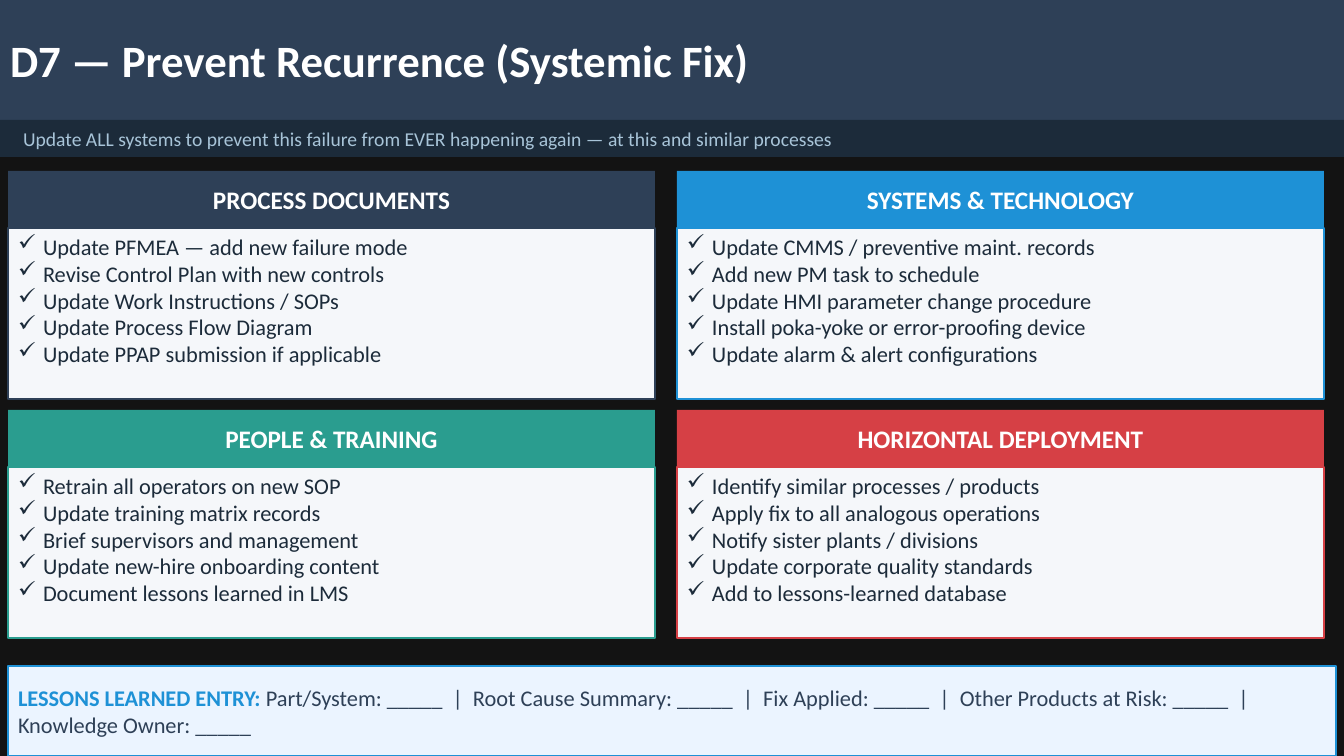
from lxml.etree import SubElement
from pptx import Presentation
from pptx.dml.color import RGBColor
from pptx.enum.shapes import MSO_SHAPE
from pptx.enum.text import MSO_ANCHOR, PP_ALIGN
from pptx.oxml.ns import qn
from pptx.util import Pt

EMU_PER_PX = 914400 / 100.8

COLORS = {
    "backdrop": "131313",
    "navy": "2E4057",
    "ink": "1C2B3A",
    "mist": "A8C4D8",
    "white": "FFFFFF",
    "panel": "F5F7FA",
    "blue": "1E91D6",
    "teal": "2A9D8F",
    "red": "D64045",
    "ice": "EBF4FF",
}

FORMATS = {
    "title": {"size": Pt(32), "bold": True},
    "subtitle": {"size": Pt(14), "bold": False},
    "heading": {"size": Pt(18), "bold": True},
    "body": {"size": Pt(16), "bold": False},
    "label": {"size": Pt(16), "bold": True},
}

ACTIONS = [
    ("PROCESS DOCUMENTS", "navy", [
        "Update PFMEA — add new failure mode",
        "Revise Control Plan with new controls",
        "Update Work Instructions / SOPs",
        "Update Process Flow Diagram",
        "Update PPAP submission if applicable",
    ]),
    ("SYSTEMS & TECHNOLOGY", "blue", [
        "Update CMMS / preventive maint. records",
        "Add new PM task to schedule",
        "Update HMI parameter change procedure",
        "Install poka-yoke or error-proofing device",
        "Update alarm & alert configurations",
    ]),
    ("PEOPLE & TRAINING", "teal", [
        "Retrain all operators on new SOP",
        "Update training matrix records",
        "Brief supervisors and management",
        "Update new-hire onboarding content",
        "Document lessons learned in LMS",
    ]),
    ("HORIZONTAL DEPLOYMENT", "red", [
        "Identify similar processes / products",
        "Apply fix to all analogous operations",
        "Notify sister plants / divisions",
        "Update corporate quality standards",
        "Add to lessons-learned database",
    ]),
]

BLANKS = ["Part/System", "Root Cause Summary", "Fix Applied",
          "Other Products at Risk", "Knowledge Owner"]


def px(length):
    return round(length * EMU_PER_PX)


def rgb(name):
    return RGBColor.from_string(COLORS[name])


class SlideBuilder:
    font_name = "Calibri"

    def __init__(self, slide):
        self.slide = slide

    def background(self, color):
        fill = self.slide.background.fill
        fill.solid()
        fill.fore_color.rgb = rgb(color)

    def panel(self, left, top, width, height, color, border=None, weight=1,
              anchor=MSO_ANCHOR.MIDDLE, inset=10):
        panel = self.slide.shapes.add_shape(
            MSO_SHAPE.RECTANGLE, px(left), px(top), px(width), px(height))
        panel.shadow.inherit = False
        panel.fill.solid()
        panel.fill.fore_color.rgb = rgb(color)
        if border:
            panel.line.color.rgb = rgb(border)
            panel.line.width = Pt(weight)
        else:
            panel.line.fill.background()
        frame = panel.text_frame
        layout = {"word_wrap": True, "vertical_anchor": anchor,
                  "margin_left": px(inset), "margin_right": px(10),
                  "margin_top": px(5), "margin_bottom": px(5)}
        for attribute, value in layout.items():
            setattr(frame, attribute, value)
        return frame

    def text(self, paragraph, words, style, color, align=PP_ALIGN.LEFT):
        paragraph.alignment = align
        run = paragraph.add_run()
        run.text = words
        for attribute, value in FORMATS[style].items():
            setattr(run.font, attribute, value)
        run.font.name = self.font_name
        run.font.color.rgb = rgb(color)

    def checklist(self, frame, items):
        for index, item in enumerate(items):
            paragraph = frame.add_paragraph() if index else frame.paragraphs[0]
            properties = paragraph._p.get_or_add_pPr()
            properties.set("marL", str(px(25)))
            properties.set("indent", str(-px(25)))
            SubElement(properties, qn("a:buChar"), char="✓")
            self.text(paragraph, item, "body", "ink")

    def card(self, left, top, heading, color, items):
        header = self.panel(left, top, 647, 57, color)
        self.text(header.paragraphs[0], heading, "heading", "white",
                  PP_ALIGN.CENTER)
        body = self.panel(left, top + 57, 647, 171, "panel", color,
                          anchor=MSO_ANCHOR.TOP)
        self.checklist(body, items)


def main():
    deck = Presentation()
    deck.slide_width, deck.slide_height = px(1344), px(756)
    builder = SlideBuilder(deck.slides.add_slide(deck.slide_layouts[6]))
    builder.background("backdrop")

    title = builder.panel(0, 0, 1344, 120, "navy")
    builder.text(title.paragraphs[0], "D7 — Prevent Recurrence (Systemic Fix)",
                 "title", "white")
    subtitle = builder.panel(0, 120, 1344, 37, "ink", inset=23)
    builder.text(subtitle.paragraphs[0],
                 "Update ALL systems to prevent this failure from EVER "
                 "happening again — at this and similar processes",
                 "subtitle", "mist")

    for index, (heading, color, items) in enumerate(ACTIONS):
        row, column = divmod(index, 2)
        builder.card(8 + 669 * column, 171 + 239 * row, heading, color, items)

    lessons = builder.panel(8, 666, 1328, 90, "ice", "blue", 1.5)
    entry = lessons.paragraphs[0]
    builder.text(entry, "LESSONS LEARNED ENTRY: ", "label", "blue")
    builder.text(entry, "  |  ".join(f"{blank}: _____" for blank in BLANKS),
                 "body", "navy")

    deck.save("out.pptx")


if __name__ == "__main__":
    main()
